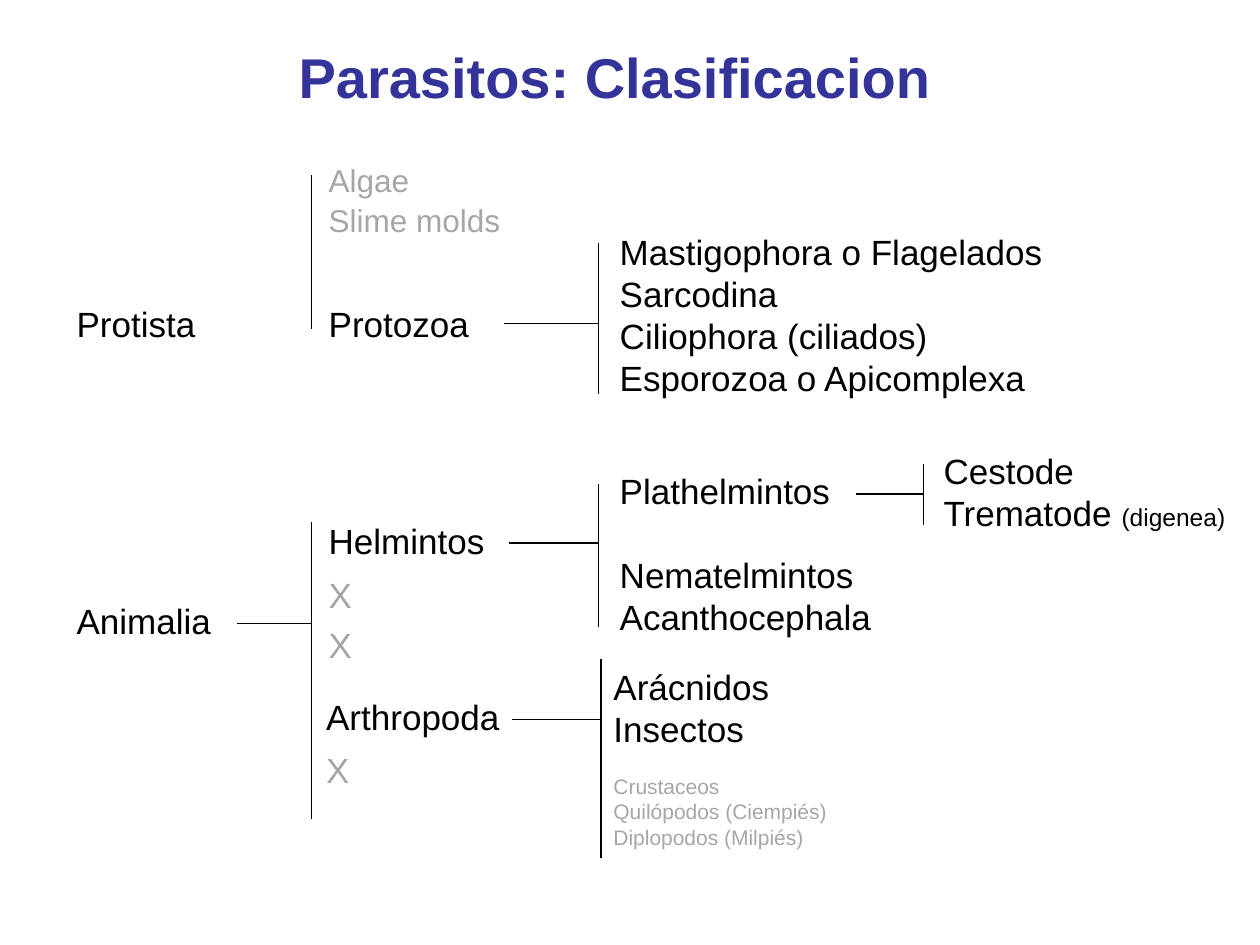
from lxml import etree
from pptx import Presentation
from pptx.dml.color import RGBColor
from pptx.enum.shapes import MSO_CONNECTOR
from pptx.enum.text import MSO_ANCHOR, MSO_AUTO_SIZE, PP_ALIGN
from pptx.oxml.ns import qn
from pptx.util import Inches, Pt

STRAIGHT = MSO_CONNECTOR.STRAIGHT
TOP = MSO_ANCHOR.TOP
NO_FIT = MSO_AUTO_SIZE.NONE
LEFT = PP_ALIGN.LEFT
TITLE_ONLY = 5
BLACK, GRAY, BLUE = "000000", "A6A6A6", "333399"

TAXA = [
    ((0.51, 2.35, 1.14, 0.43), ["Protista"], {}),
    ((0.51, 4.71, 1.27, 0.43), ["Animalia"], {}),
    ((2.51, 1.23, 0.84, 0.4), ["Algae"], {"size": 18, "color": GRAY}),
    ((2.51, 1.55, 1.56, 0.4), ["Slime molds"], {"size": 18, "color": GRAY}),
    ((2.51, 2.35, 1.31, 0.43), ["Protozoa"], {}),
    ((2.51, 4.07, 1.44, 0.43), ["Helmintos"], {}),
    ((2.51, 4.5, 0.39, 0.43), ["X"], {"color": GRAY}),
    ((2.51, 4.9, 0.39, 0.43), ["X"], {"color": GRAY}),
    ((2.49, 5.47, 1.57, 0.43), ["Arthropoda"], {}),
    ((2.49, 5.89, 0.39, 0.43), ["X"], {"color": GRAY}),
    ((4.82, 1.78, 3.59, 1.45),
     ["Mastigophora o Flagelados", "Sarcodina", "Ciliophora (ciliados)",
      "Esporozoa o Apicomplexa"], {}),
]

BRACKETS = [
    (2.47, 1.39, 2.61, None),
    (2.47, 4.14, 6.5, (1.88, 4.95)),
    (4.75, 1.93, 3.13, (4, 2.57)),
    (4.75, 3.84, 4.98, (4.04, 4.31)),
    (4.77, 5.23, 6.81, (4.06, 5.71)),
    (7.33, 3.68, 4.17, (6.79, 3.92)),
]


def rgb(value):
    """Turn a hex string into a colour."""
    return RGBColor.from_string(value)


def add_span(para, text, size=20, color=BLACK, bold=False):
    """Add a formatted run to a paragraph."""
    span = para.add_run()
    span.text = text
    for name, value in {"name": "Arial", "size": Pt(size), "bold": bold}.items():
        setattr(span.font, name, value)
    span.font.color.rgb = rgb(color)


def add_taxa(page, area, names, gap_before=None, gap=0, **style):
    """Add a list of taxa, with an optional gap before one of them."""
    box = page.shapes.add_textbox(*map(Inches, area))
    frame = box.text_frame
    frame.word_wrap = False
    frame.auto_size = NO_FIT
    for index, name in enumerate(names):
        para = frame.paragraphs[0] if index == 0 else frame.add_paragraph()
        if name == gap_before:
            para.space_before = Pt(gap)
        add_span(para, name, **style)
    return frame


def add_line(page, start, end):
    """Draw a thin black line between two points."""
    line = page.shapes.add_connector(STRAIGHT, *map(Inches, (*start, *end)))
    line.line.color.rgb = rgb(BLACK)
    line.line.width = Pt(0.75)
    etree.SubElement(line._element.spPr, qn("a:effectLst"))


def add_bracket(page, x, top, bottom, branch):
    """Draw a vertical stem and the branch that leads to it."""
    add_line(page, (x, top), (x, bottom))
    if branch:
        add_line(page, branch, (x, branch[1]))


def add_title(page, area, text):
    """Place the title placeholder."""
    title = page.shapes.title
    for name, value in zip(("left", "top", "width", "height"), area):
        setattr(title, name, Inches(value))
    frame = title.text_frame
    for name, value in {"vertical_anchor": TOP, "auto_size": NO_FIT,
                        "word_wrap": True}.items():
        setattr(frame, name, value)
    para = frame.paragraphs[0]
    para.alignment = LEFT
    add_span(para, text, size=32, color=BLUE, bold=True)


def add_helminths(page):
    """Add the helminth phyla and the flatworm classes."""
    add_taxa(page, (4.82, 3.68, 2.19, 1.43),
             ["Plathelmintos", "Nematelmintos", "Acanthocephala"],
             gap_before="Nematelmintos", gap=24)
    classes = add_taxa(page, (7.39, 3.52, 2.44, 0.77), ["Cestode", "Trematode "])
    add_span(classes.paragraphs[-1], "(digenea)", size=14)


def add_arthropods(page):
    """Add the arthropod classes, the minor ones small and gray."""
    classes = add_taxa(page, (4.77, 5.23, 1.91, 1.92), ["Arácnidos", "Insectos"])
    minor = ["Crustaceos", "Quilópodos (Ciempiés)", "Diplopodos (Milpiés)"]
    for index, name in enumerate(minor):
        para = classes.add_paragraph()
        para.space_before = Pt(0 if index else 14)
        add_span(para, name, size=12, color=GRAY)


def main():
    """Build the classification slide."""
    deck = Presentation()
    deck.slide_width, deck.slide_height = Inches(10), Inches(7.5)
    page = deck.slides.add_slide(deck.slide_layouts[TITLE_ONLY])
    add_title(page, (2.27, 0.29, 7.5, 0.63), "Parasitos: Clasificacion")
    for area, names, style in TAXA:
        add_taxa(page, area, names, **style)
    add_helminths(page)
    add_arthropods(page)
    for bracket in BRACKETS:
        add_bracket(page, *bracket)
    deck.save("out.pptx")


if __name__ == "__main__":
    main()
